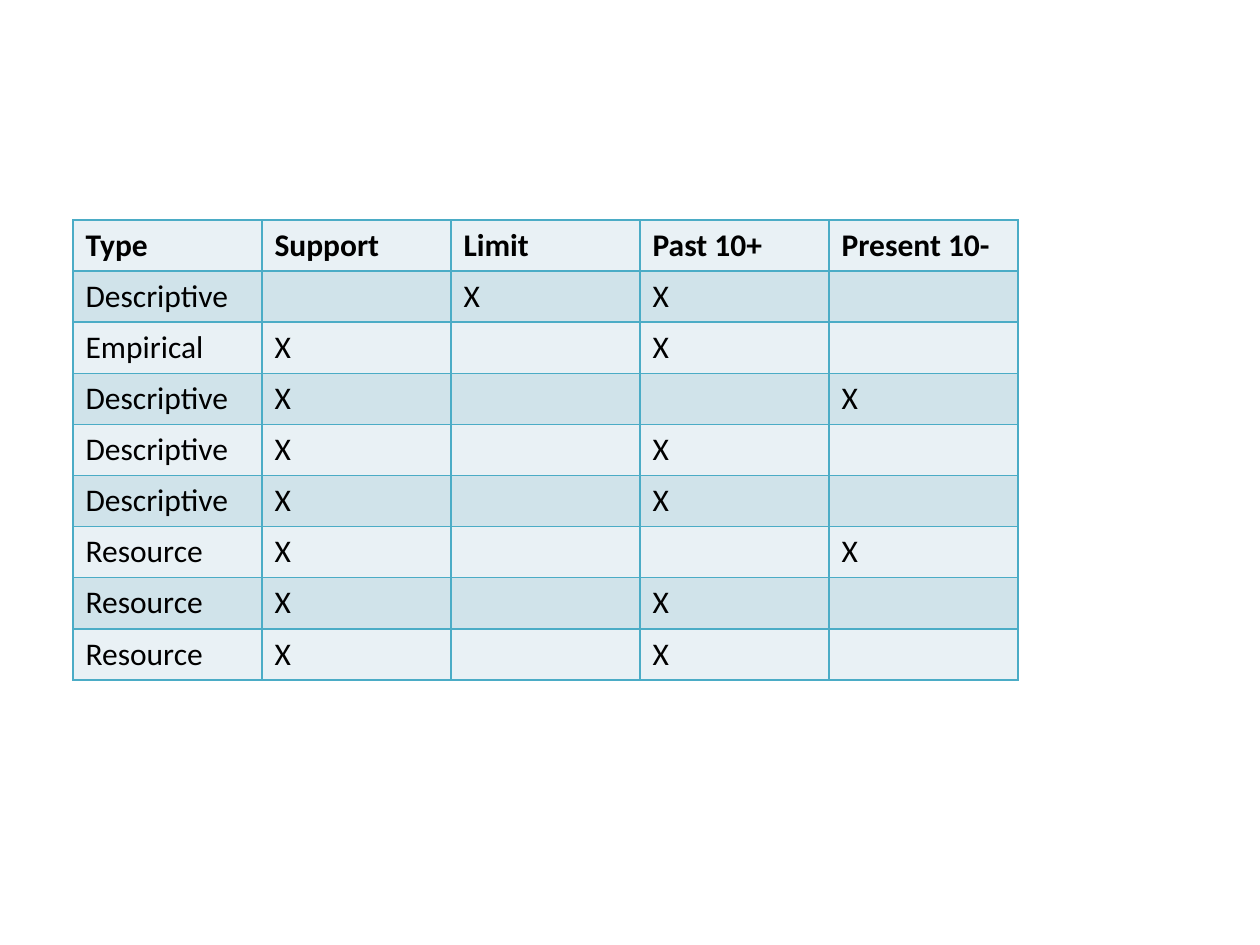
"""Build a slide with a table that classifies sources by type, stance and age."""
from dataclasses import dataclass

from lxml import etree
from pptx import Presentation
from pptx.dml.color import RGBColor
from pptx.oxml.ns import qn
from pptx.util import Emu, Pt

PX_PER_INCH = 126
BLANK_LAYOUT = 6
FONT = "Calibri"
TEXT = "000000"
BORDER = "4BACC6"
BANDS = ("E9F1F5", "D0E3EA")
HEADERS = ("Type", "Support", "Limit", "Past 10+", "Present 10-")
TABLE_LEFT, TABLE_TOP = 73, 220
COLUMN_WIDTH, ROW_HEIGHT = 189, 51


@dataclass(frozen=True)
class Source:
    """A source type and the headers it is marked under."""
    kind: str
    marks: tuple[str, str]


SOURCES = (
    Source("Descriptive", ("Limit", "Past 10+")),
    Source("Empirical", ("Support", "Past 10+")),
    Source("Descriptive", ("Support", "Present 10-")),
    Source("Descriptive", ("Support", "Past 10+")),
    Source("Descriptive", ("Support", "Past 10+")),
    Source("Resource", ("Support", "Present 10-")),
    Source("Resource", ("Support", "Past 10+")),
    Source("Resource", ("Support", "Past 10+")),
)


def px(length: int) -> Emu:
    """Turn pixels into EMU."""
    return Emu(round(length * 914400 / PX_PER_INCH))


def color(value: str) -> RGBColor:
    """Turn a hex string into a colour."""
    return RGBColor.from_string(value)


def source_row(source: Source) -> tuple[str, ...]:
    """Return the cell texts for one source."""
    marks = ("X" if header in source.marks else "" for header in HEADERS[1:])
    return (source.kind, *marks)


def add_borders(cell) -> None:
    """Draw a one-point line on each side of a cell."""
    properties = cell._tc.get_or_add_tcPr()
    for side in ("a:lnL", "a:lnR", "a:lnT", "a:lnB"):
        line = etree.SubElement(properties, qn(side), w=str(Pt(1)))
        fill = etree.SubElement(line, qn("a:solidFill"))
        etree.SubElement(fill, qn("a:srgbClr"), val=BORDER)


def format_cell(cell, text: str, band: str, bold: bool) -> None:
    """Give a cell its borders, fill and text."""
    add_borders(cell)
    cell.fill.solid()
    cell.fill.fore_color.rgb = color(band)
    if text:
        span = cell.text_frame.paragraphs[0].add_run()
        span.text = text
        span.font.name = FONT
        span.font.size = Pt(18)
        span.font.bold = bold
        span.font.color.rgb = color(TEXT)


def add_source_table(page) -> None:
    """Add the table with a header row and one row per source."""
    rows = [HEADERS, *map(source_row, SOURCES)]
    frame = page.shapes.add_table(
        len(rows), len(HEADERS), px(TABLE_LEFT), px(TABLE_TOP),
        px(COLUMN_WIDTH * len(HEADERS)), px(ROW_HEIGHT * len(rows)))
    table = frame.table
    for column in table.columns:
        column.width = px(COLUMN_WIDTH)
    for index, texts in enumerate(rows):
        table.rows[index].height = px(ROW_HEIGHT)
        for cell, text in zip(table.rows[index].cells, texts):
            format_cell(cell, text, BANDS[index % 2], index == 0)


def main() -> None:
    """Build and save the deck."""
    deck = Presentation()
    deck.slide_width, deck.slide_height = px(1260), px(945)
    page = deck.slides.add_slide(deck.slide_layouts[BLANK_LAYOUT])
    add_source_table(page)
    deck.save("out.pptx")


if __name__ == "__main__":
    main()
